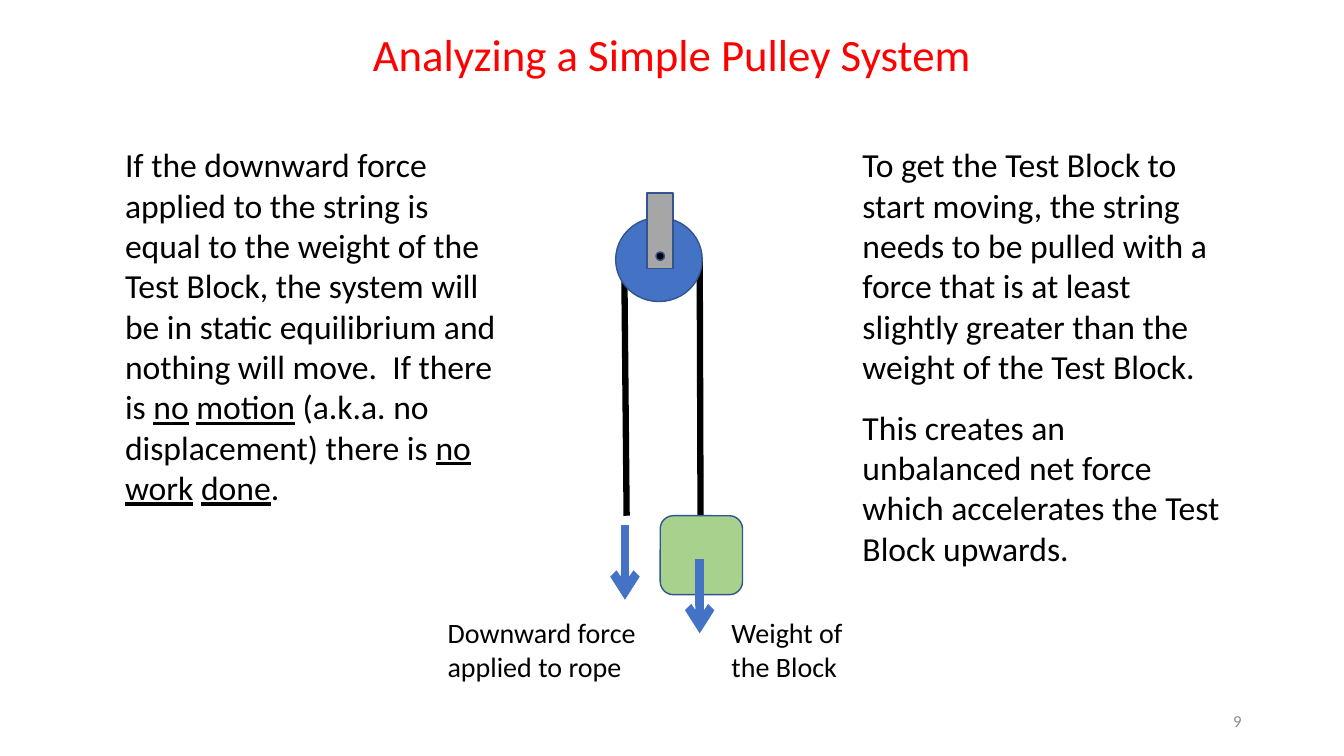
from dataclasses import dataclass

from lxml import etree
from pptx import Presentation
from pptx import util as u
from pptx.dml import color
from pptx.enum import shapes, text
from pptx.oxml import ns

COLOURS: dict[str, str] = {
    "ink": "000000",
    "title": "FF0000",
    "wheel": "4472C4",
    "outline": "325491",
    "bracket": "A6A6A6",
    "block": "A9D18E",
    "number": "8C8C8C",
}
FONT = "Calibri"
COLUMNS, ROWS = 160, 90
WIDTH, HEIGHT = u.Inches(13.33), u.Inches(7.5)
SHAPE = shapes.MSO_SHAPE
ALIGN = text.PP_ALIGN
ANCHOR = text.MSO_ANCHOR


@dataclass(frozen=True)
class Area:
    column: float
    row: float
    columns: float
    rows: float


@dataclass(frozen=True)
class Line:
    start: tuple[float, float]
    end: tuple[float, float]
    colour: str
    weight: float
    arrow: bool = False


@dataclass(frozen=True)
class Part:
    kind: shapes.MSO_SHAPE
    area: Area
    fill: str


@dataclass(frozen=True)
class Label:
    area: Area
    paragraphs: tuple[str, ...]
    size: float
    colour: str = "ink"
    align: text.PP_ALIGN = ALIGN.LEFT
    anchor: text.MSO_ANCHOR = ANCHOR.TOP
    gap: float = 0


ROPES = (
    Line((83.3, 30.8), (83.4, 61.4), "ink", 4.5),
    Line((74.3, 29), (74.6, 61.4), "ink", 4.5),
)
PARTS = (
    Part(SHAPE.OVAL, Area(73.3, 25.9, 10.3, 10), "wheel"),
    Part(SHAPE.RECTANGLE, Area(77.05, 23, 3.1, 9), "bracket"),
    Part(SHAPE.OVAL, Area(78.1, 30, 1, 1), "ink"),
    Part(SHAPE.ROUNDED_RECTANGLE, Area(78.6, 61.4, 9.8, 9.4), "block"),
)
FORCES = (
    Line((74.4, 62.5), (74.4, 71.4), "wheel", 6, True),
    Line((83.3, 66.6), (83.3, 75.4), "wheel", 6, True),
)
TITLE = Label(
    Area(40.6, 2.6, 78.8, 7.7),
    ("Analyzing a Simple Pulley System",),
    32, "title", ALIGN.CENTER,
)
LABELS = (
    Label(Area(85.9, 72.7, 19.1, 9.2), ("Weight of the Block",), 20),
    Label(Area(52.1, 72.7, 25, 9.2), ("Downward force applied to rope",), 20),
    Label(
        Area(13.7, 16.6, 47.8, 44.9),
        (
            "If the downward force applied to the string is equal to the weight "
            "of the Test Block, the system will be in static equilibrium and "
            "nothing will move.  If there is _no_ _motion_ (a.k.a. no "
            "displacement) there is _no_ _work_ _done_.",
        ),
        24,
    ),
    Label(
        Area(101.5, 16.6, 46, 52.1),
        (
            "To get the Test Block to start moving, the string needs to be pulled "
            "with a force that is at least slightly greater than the weight of "
            "the Test Block.",
            "This creates an unbalanced net force which accelerates the Test "
            "Block upwards.",
        ),
        24, gap=14.6,
    ),
    Label(
        Area(113, 83.4, 36, 4.8), ("9",), 12, "number",
        ALIGN.RIGHT, ANCHOR.MIDDLE,
    ),
)


def across(columns: float) -> int:
    return round(WIDTH * columns / COLUMNS)


def down(rows: float) -> int:
    return round(HEIGHT * rows / ROWS)


def bounds(area: Area) -> tuple[int, int, int, int]:
    return (across(area.column), down(area.row),
            across(area.columns), down(area.rows))


def rgb(name: str) -> color.RGBColor:
    return color.RGBColor.from_string(COLOURS[name])


def draw_line(page, line: Line) -> None:
    connector = page.shapes.add_connector(
        shapes.MSO_CONNECTOR.STRAIGHT,
        across(line.start[0]), down(line.start[1]),
        across(line.end[0]), down(line.end[1]),
    )
    connector.line.color.rgb = rgb(line.colour)
    connector.line.width = u.Pt(line.weight)
    if line.arrow:
        stroke = connector.line._get_or_add_ln()
        etree.SubElement(stroke, ns.qn("a:tailEnd"), type="arrow")
    etree.SubElement(connector._element.spPr, ns.qn("a:effectLst"))


def draw_part(page, part: Part) -> None:
    shape = page.shapes.add_shape(part.kind, *bounds(part.area))
    shape.shadow.inherit = False
    shape.fill.solid()
    shape.fill.fore_color.rgb = rgb(part.fill)
    shape.line.color.rgb = rgb("outline")
    shape.line.width = u.Pt(1)


def write_label(box, label: Label) -> None:
    box.left, box.top, box.width, box.height = bounds(label.area)
    frame = box.text_frame
    frame.word_wrap = True
    frame.auto_size = text.MSO_AUTO_SIZE.NONE
    frame.vertical_anchor = label.anchor
    for index, wording in enumerate(label.paragraphs):
        para = frame.add_paragraph() if index else frame.paragraphs[0]
        para.alignment = label.align
        para.line_spacing = 1.0
        para.space_before = u.Pt(label.gap if index else 0)
        for order, piece in enumerate(wording.split("_")):
            span = para.add_run()
            span.text = piece
            span.font.name = FONT
            span.font.size = u.Pt(label.size)
            span.font.color.rgb = rgb(label.colour)
            if order % 2:
                span.font.underline = True


def main() -> None:
    deck = Presentation()
    deck.slide_width, deck.slide_height = WIDTH, HEIGHT
    page = deck.slides.add_slide(deck.slide_layouts.get_by_name("Title Only"))
    write_label(page.shapes.title, TITLE)
    for rope in ROPES:
        draw_line(page, rope)
    for part in PARTS:
        draw_part(page, part)
    for force in FORCES:
        draw_line(page, force)
    for label in LABELS:
        write_label(page.shapes.add_textbox(*bounds(label.area)), label)
    deck.save("out.pptx")


if __name__ == "__main__":
    main()
